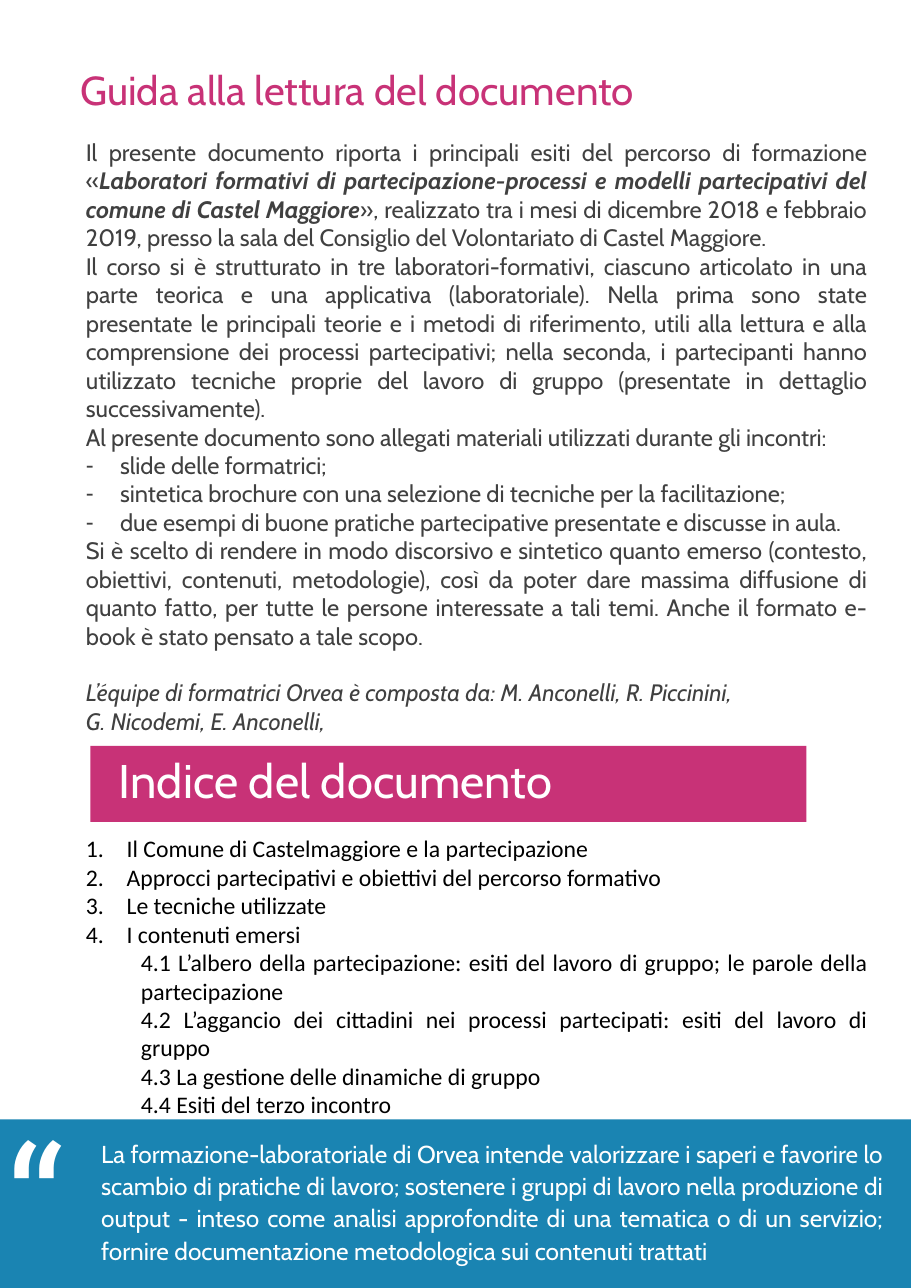
import pptx
import pptx.dml.color
import pptx.enum.shapes
import pptx.enum.text
import pptx.oxml.ns
import pptx.util
import lxml.etree

Inches = pptx.util.Inches
Pt = pptx.util.Pt
RGBColor = pptx.dml.color.RGBColor
ALIGN = pptx.enum.text.PP_ALIGN
ANCHOR = pptx.enum.text.MSO_ANCHOR

GREY = RGBColor(0x40, 0x40, 0x40)
BLACK = RGBColor(0, 0, 0)
WHITE = RGBColor(255, 255, 255)
MAGENTA = RGBColor(0xC8, 0x32, 0x77)
BLUE = RGBColor(0x1A, 0x84, 0xB2)

LINE_HEIGHT = Pt(18.5)
NARROW_INSETS = (0.06, 0.05)
ITALIC = {"italic": True}
BOLD_ITALIC = {"bold": True, "italic": True}
DASH = ("buChar", {"char": "-"}, 0.31, -0.31)
NUMBER = ("buAutoNum", {"type": "arabicPeriod"}, 0.37, -0.37)
PLAIN = ("buNone", {}, 0, 0)
INDENTED = ("buNone", {}, 0.5, 0)


def place_text_frame(box, place, insets=NARROW_INSETS, anchor=ANCHOR.TOP):
    box.left, box.top, box.width, box.height = map(Inches, place)
    side, edge = map(Inches, insets)
    frame_format = {
        "margin_left": side, "margin_right": side,
        "margin_top": edge, "margin_bottom": edge,
        "word_wrap": True, "vertical_anchor": anchor,
        "auto_size": pptx.enum.text.MSO_AUTO_SIZE.SHAPE_TO_FIT_TEXT,
    }
    for name, value in frame_format.items():
        setattr(box.text_frame, name, value)


def write_paragraph(para, spans, font, color, marker=PLAIN, **para_format):
    """Write (text, font overrides) spans with a bullet marker and its indents."""
    para_format = {"space_before": Pt(0), "line_spacing": 1.0} | para_format
    for name, value in para_format.items():
        setattr(para, name, value)
    tag, attributes, margin, indent = marker
    properties = para._p.get_or_add_pPr()
    properties.set("marL", str(Inches(margin)))
    properties.set("indent", str(Inches(indent)))
    lxml.etree.SubElement(properties, pptx.oxml.ns.qn("a:" + tag), attributes)
    for text, overrides in spans:
        span = para.add_run()
        span.text = text
        for name, value in (font | overrides).items():
            setattr(span.font, name, value)
        span.font.color.rgb = color


deck = pptx.Presentation()
deck.slide_width, deck.slide_height = Inches(8.27), Inches(11.69)
page = deck.slides.add_slide(deck.slide_layouts.get_by_name("Two Content"))
title, guide, contents = page.placeholders

# Page title
place_text_frame(title, (0.67, 0.54, 7.06, 0.55))
write_paragraph(title.text_frame.paragraphs[0],
                [("Guida alla lettura del documento", {})],
                {"name": "Cabin", "size": Pt(26.4)}, MAGENTA, alignment=ALIGN.LEFT)

# Reading guide and table of contents
guide_paragraphs = [
    (PLAIN, [
        ("Il presente documento riporta i principali esiti del percorso di formazione «", {}),
        ("Laboratori formativi di partecipazione-processi e modelli partecipativi del "
         "comune di Castel Maggiore", BOLD_ITALIC),
        ("», realizzato tra i mesi di dicembre 2018 e febbraio 2019, presso la sala del "
         "Consiglio del Volontariato di Castel Maggiore.", {}),
    ], {}),
    (PLAIN, [(
        "Il corso si è strutturato in tre laboratori-formativi, ciascuno articolato in una "
        "parte teorica e una applicativa (laboratoriale). Nella prima sono state presentate "
        "le principali teorie e i metodi di riferimento, utili alla lettura e alla "
        "comprensione dei processi partecipativi; nella seconda, i partecipanti hanno "
        "utilizzato tecniche proprie del lavoro di gruppo (presentate in dettaglio "
        "successivamente).", {})], {}),
    (PLAIN, [("Al presente documento sono allegati materiali utilizzati durante gli "
              "incontri:", {})], {}),
    (DASH, [("slide delle formatrici;", {})], {}),
    (DASH, [("sintetica brochure con una selezione di tecniche per la facilitazione;", {})], {}),
    (DASH, [("due esempi di buone pratiche partecipative presentate e discusse in aula.", {})], {}),
    (PLAIN, [(
        "Si è scelto di rendere in modo discorsivo e sintetico quanto emerso (contesto, "
        "obiettivi, contenuti, metodologie), così da poter dare massima diffusione di quanto "
        "fatto, per tutte le persone interessate a tali temi. Anche il formato e-book è stato "
        "pensato a tale scopo.", {})], {}),
    (PLAIN, [("L’équipe di formatrici Orvea è composta da: M. Anconelli, R. Piccinini,",
              ITALIC)], {"space_before": LINE_HEIGHT}),
    (PLAIN, [("G. Nicodemi, E. Anconelli,", ITALIC)], {}),
]
chapters = [
    "Il Comune di Castelmaggiore e la partecipazione",
    "Approcci partecipativi e obiettivi del percorso formativo",
    "Le tecniche utilizzate",
    "I contenuti emersi",
]
sections = [
    "4.1 L’albero della partecipazione: esiti del lavoro di gruppo; le parole della partecipazione",
    "4.2 L’aggancio dei cittadini nei processi partecipati: esiti del lavoro di gruppo",
    "4.3 La gestione delle dinamiche di gruppo",
    "4.4 Esiti del terzo incontro",
]
contents_paragraphs = [(NUMBER, [(chapter, {})], {}) for chapter in chapters]
contents_paragraphs += [(INDENTED, [(section, {})], {"level": 1}) for section in sections]

for box, place, paragraphs, font_name, color in [
    (guide, (0.72, 1.2, 7.21, 5.29), guide_paragraphs, "Cabin", GREY),
    (contents, (0.72, 7.52, 7.21, 2.44), contents_paragraphs, "Calibri", BLACK),
]:
    place_text_frame(box, place)
    for index, (marker, spans, para_format) in enumerate(paragraphs):
        frame = box.text_frame
        para = frame.add_paragraph() if index else frame.paragraphs[0]
        write_paragraph(para, spans, {"name": font_name, "size": Pt(15.5)}, color,
                        marker, alignment=ALIGN.JUSTIFY, **para_format)

# Coloured bands
for place, color in [((0.82, 6.77, 6.5, 0.69), MAGENTA), ((0, 10.16, 8.27, 1.54), BLUE)]:
    band = page.shapes.add_shape(pptx.enum.shapes.MSO_SHAPE.RECTANGLE, *map(Inches, place))
    band.shadow.inherit = False
    band.fill.solid()
    band.fill.fore_color.rgb = color
    band.line.fill.background()

# White text on the bands
quote = ("La formazione-laboratoriale di Orvea intende valorizzare i saperi e favorire lo "
         "scambio di pratiche di lavoro; sostenere i gruppi di lavoro nella produzione di "
         "output - inteso come analisi approfondite di una tematica o di un servizio; "
         "fornire documentazione metodologica sui contenuti trattati")
for text, place, insets, anchor, font_name, size, spacing, alignment in [
    ("Indice del documento", (1.02, 6.83, 6.92, 0.57), NARROW_INSETS, ANCHOR.TOP,
     "Cabin", 30.85, 0.9, ALIGN.LEFT),
    ("“", (0, 9.84, 0.67, 1.91), NARROW_INSETS, ANCHOR.MIDDLE,
     "Roboto", 105.8, 1.1, ALIGN.LEFT),
    (quote, (0.82, 10.26, 7.3, 1.59), (0.1, 0.05), ANCHOR.TOP,
     "Cabin", 16, 1.1, ALIGN.JUSTIFY),
]:
    box = page.shapes.add_textbox(*map(Inches, place))
    place_text_frame(box, place, insets, anchor)
    write_paragraph(box.text_frame.paragraphs[0], [(text, {})],
                    {"name": font_name, "size": Pt(size)}, WHITE,
                    line_spacing=spacing, alignment=alignment)

deck.save("out.pptx")
